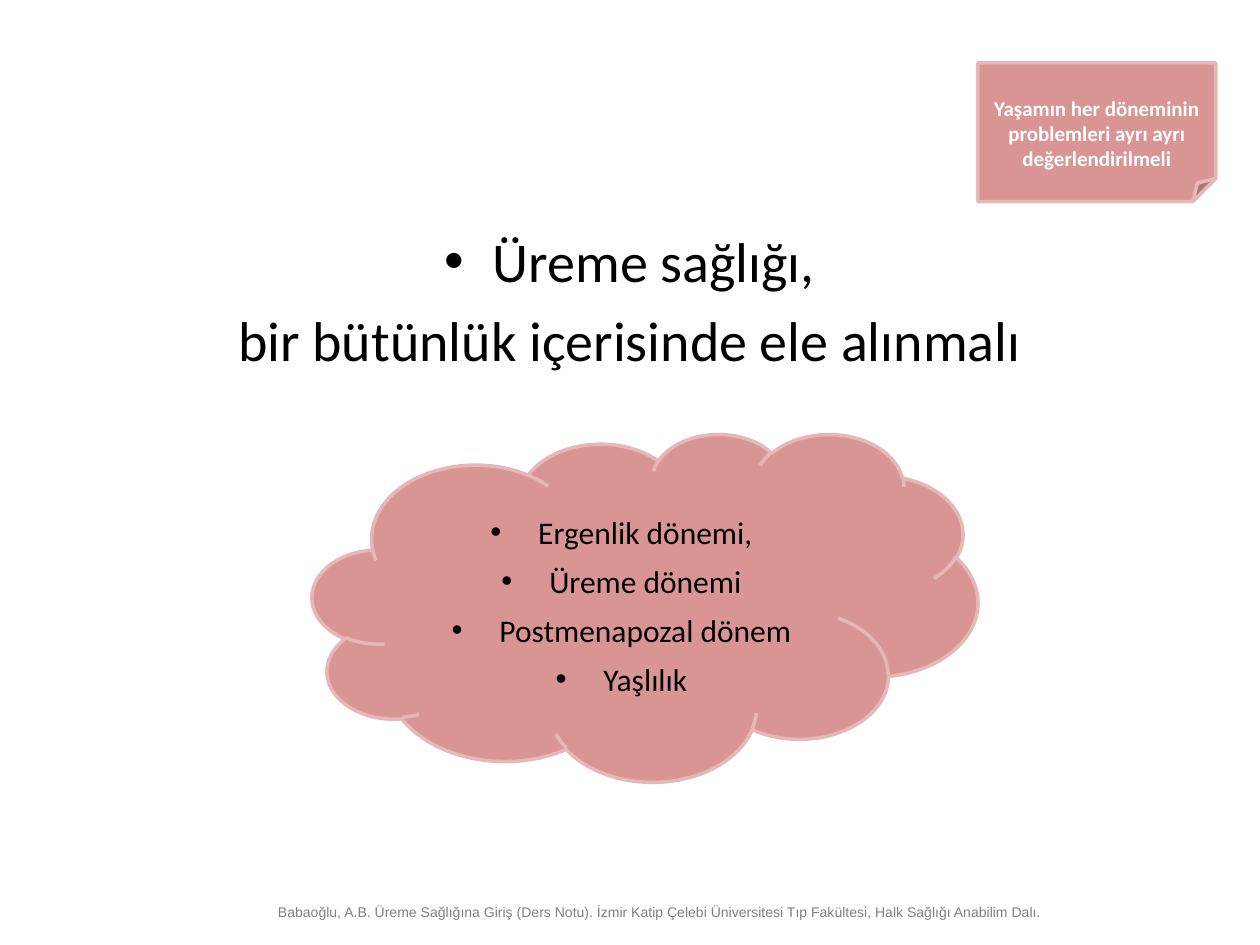
from lxml import etree
from pptx import Presentation
from pptx.dml.color import RGBColor
from pptx.enum.shapes import MSO_SHAPE
from pptx.enum.text import MSO_ANCHOR, PP_ALIGN
from pptx.oxml.ns import qn
from pptx.util import Inches, Pt

CARD = MSO_SHAPE.FOLDED_CORNER
CLOUD = MSO_SHAPE.CLOUD
MIDDLE = MSO_ANCHOR.MIDDLE
CENTER = PP_ALIGN.CENTER

BLACK, WHITE, GREY = "000000", "FFFFFF", "7F7F7F"
ROSE, PINK = "D99593", "E5B8B7"
HANG = Inches(0.38)
GAP = 6.4


def color(code):
    return RGBColor.from_string(code)


def add_bullet(para):
    props = para._p.get_or_add_pPr()
    props.set("marL", str(HANG))
    props.set("indent", str(-HANG))
    tint = etree.SubElement(props, qn("a:buClr"))
    etree.SubElement(tint, qn("a:srgbClr"), val=BLACK)
    etree.SubElement(props, qn("a:buFont"), typeface="Arial")
    etree.SubElement(props, qn("a:buChar"), char="•")


def set_text(shape, lines, size, code, font="Calibri", bold=False, bullets=0):
    """Fill the shape with centred lines; the first ones get bullets."""
    frame = shape.text_frame
    frame.word_wrap = True
    frame.text = "\n".join(lines)
    for i, para in enumerate(frame.paragraphs):
        para.alignment = CENTER
        para.space_before = Pt(GAP if i else 0)
        if i < bullets:
            add_bullet(para)
        for run in para.runs:
            run.font.name = font
            run.font.size = Pt(size)
            run.font.bold = bold
            run.font.color.rgb = color(code)


def add_box(slide, *area):
    return slide.shapes.add_textbox(*map(Inches, area))


def add_shape(slide, kind, area, top):
    """Add a rose shape whose text starts below the given top inset."""
    shape = slide.shapes.add_shape(kind, *map(Inches, area))
    shape.shadow.inherit = False
    shape.fill.solid()
    shape.fill.fore_color.rgb = color(ROSE)
    shape.line.color.rgb = color(PINK)
    shape.line.width = Pt(2)
    shape.text_frame.vertical_anchor = MIDDLE
    shape.text_frame.margin_top = Inches(top)
    return shape


def main():
    deck = Presentation()
    deck.slide_width, deck.slide_height = Inches(10), Inches(7.5)
    slide = deck.slides.add_slide(deck.slide_layouts[6])

    body = add_box(slide, 0.5, 1.75, 9, 4.95)
    set_text(body, ["Üreme sağlığı,", "bir bütünlük içerisinde ele alınmalı"],
             32, BLACK, bullets=1)

    card = add_shape(slide, CARD, (7.76, 0.5, 1.89, 1.1), 0.25)
    set_text(card, ["Yaşamın her döneminin problemleri ayrı ayrı değerlendirilmeli"],
             12, WHITE, bold=True)

    stages = ["Ergenlik dönemi,", "Üreme dönemi", "Postmenapozal dönem", "Yaşlılık"]
    cloud = add_shape(slide, CLOUD, (2.48, 3.44, 5.28, 2.76), 0.14)
    set_text(cloud, stages, 18, BLACK, bullets=len(stages))

    credit = add_box(slide, 1.97, 7.12, 6.54, 0.37)
    set_text(credit, ["Babaoğlu, A.B. Üreme Sağlığına Giriş (Ders Notu). "
                      "İzmir Katip Çelebi Üniversitesi Tıp Fakültesi, "
                      "Halk Sağlığı Anabilim Dalı."], 8, GREY, font="Arial")

    deck.save("out.pptx")


if __name__ == "__main__":
    main()
